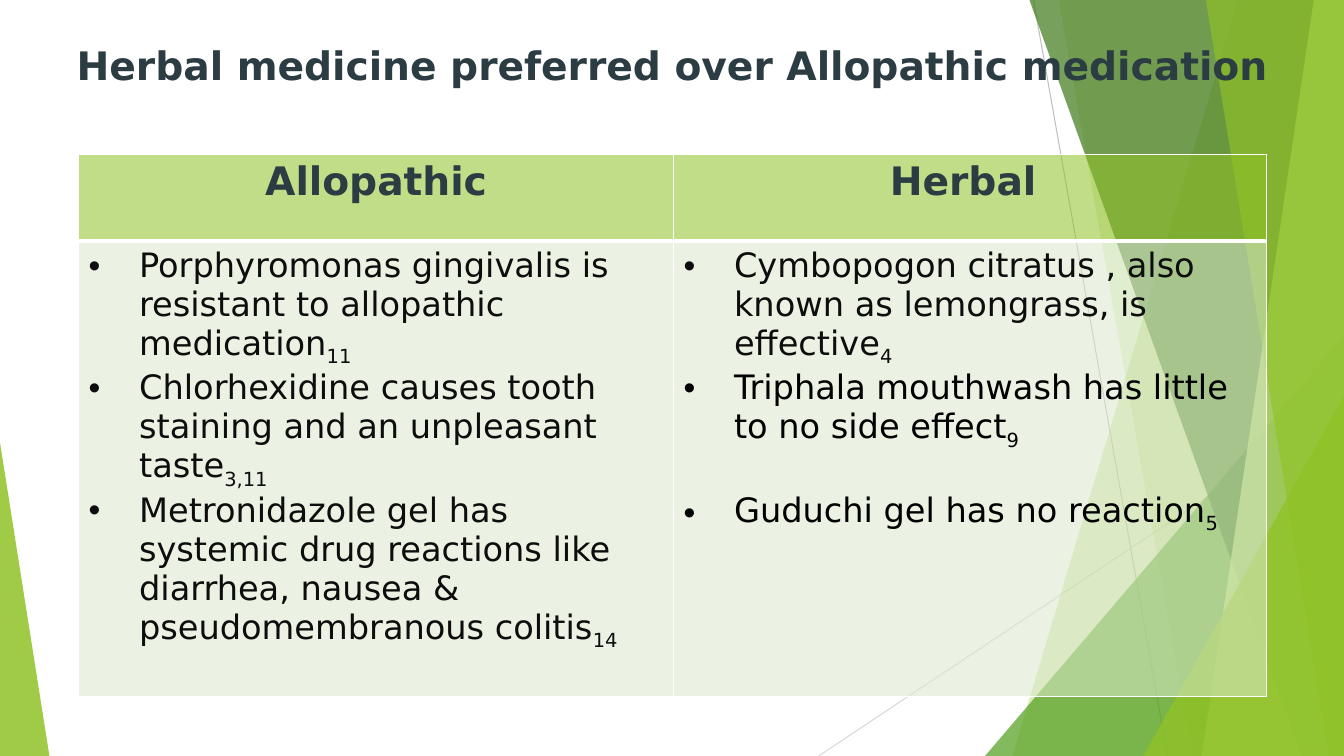
from dataclasses import dataclass

from lxml.etree import Element, SubElement
from pptx import Presentation
from pptx.dml.color import RGBColor
from pptx.enum.shapes import MSO_CONNECTOR, MSO_SHAPE
from pptx.enum.text import MSO_ANCHOR, PP_ALIGN
from pptx.oxml.ns import qn
from pptx.util import Inches, Pt


@dataclass(frozen=True)
class Theme:
    font: str = "DejaVu Sans"
    heading_size: int = 28
    body_size: int = 24
    heading: str = "2C3C43"
    text: str = "0D0D0D"
    black: str = "000000"
    white: str = "FFFFFF"
    lime: str = "90C226"
    leaf: str = "54A021"
    forest: str = "3F7819"
    pale_lime: str = "C0E474"
    cell: str = "DBE9CD"
    gray: str = "BFBFBF"
    light_gray: str = "D9D9D9"


THEME = Theme()
WIDTH, HEIGHT = 13.33, 7.5
HEADERS = ("Allopathic", "Herbal ")
ALLOPATHIC = (
    ("Porphyromonas gingivalis is resistant to allopathic medication", "11", THEME.text, 0),
    ("Chlorhexidine causes tooth staining and an unpleasant taste", "3,11", THEME.text, 0),
    ("Metronidazole gel has systemic drug reactions like diarrhea, nausea & "
     "pseudomembranous colitis", "14", THEME.text, 0),
)
HERBAL = (
    ("Cymbopogon citratus , also known as lemongrass, is effective", "4", THEME.text, 0),
    ("Triphala mouthwash has little to no side effect", "9", THEME.black, 0),
    ("Guduchi gel has no reaction", "5", THEME.black, 28),
)


def apply_format(target, values):
    for name, value in values.items():
        setattr(target, name, value)


def set_fill(fill, element, color, opacity):
    fill.solid()
    fill.fore_color.rgb = RGBColor.from_string(color)
    color_element = element.find(f".//{qn('a:solidFill')}/{qn('a:srgbClr')}")
    SubElement(color_element, qn("a:alpha"), val=str(opacity * 1000))


def style_facet(shape, color, opacity):
    shape.shadow.inherit = False
    set_fill(shape.fill, shape.element, color, opacity)
    shape.line.fill.background()


def add_line(slide, start, end, color):
    connector = slide.shapes.add_connector(
        MSO_CONNECTOR.STRAIGHT, *map(Inches, start + end))
    connector.line.color.rgb = RGBColor.from_string(color)
    connector.line.width = Pt(0.75)
    SubElement(connector.element.spPr, qn("a:effectLst"))


def add_edge_facet(slide, top, bottom, color, opacity):
    builder = slide.shapes.build_freeform(Inches(top), 0, scale=1.0)
    corners = ((WIDTH, 0), (WIDTH, HEIGHT), (bottom, HEIGHT))
    builder.add_line_segments([(Inches(x), Inches(y)) for x, y in corners], close=True)
    style_facet(builder.convert_to_shape(), color, opacity)


def add_triangle(slide, left, top, width, apex, color, opacity):
    shape = slide.shapes.add_shape(
        MSO_SHAPE.ISOSCELES_TRIANGLE,
        *map(Inches, (left, top, width, HEIGHT - top)))
    shape.adjustments[0] = apex
    style_facet(shape, color, opacity)


def add_background(slide):
    add_line(slide, (10.25, 0), (11.58, HEIGHT), THEME.gray)
    add_line(slide, (WIDTH, 4.03), (8.12, HEIGHT), THEME.light_gray)
    add_edge_facet(slide, 12.28, 10.04, THEME.lime, 30)
    add_edge_facet(slide, 10.5, 11.83, THEME.lime, 20)
    add_triangle(slide, 9.77, 3.33, 3.56, 1, THEME.leaf, 72)
    add_edge_facet(slide, 10.21, 12.91, THEME.forest, 70)
    add_edge_facet(slide, 13.03, 11.92, THEME.pale_lime, 70)
    add_edge_facet(slide, 11.96, 13.18, THEME.lime, 65)
    add_triangle(slide, 11.34, 3.93, 1.99, 1, THEME.lime, 80)
    add_triangle(slide, 0, 4.39, 0.49, 0, THEME.lime, 85)


def add_run(paragraph, text, size, color, bold=False):
    run = paragraph.add_run()
    run.text = text
    apply_format(run.font, {"name": THEME.font, "size": Pt(size), "bold": bold})
    run.font.color.rgb = RGBColor.from_string(color)
    return run


def write_heading(paragraph, text):
    paragraph.alignment = PP_ALIGN.CENTER
    add_run(paragraph, text, THEME.heading_size, THEME.heading, True)


def write_bullet(paragraph, text, reference, color, gap):
    paragraph.space_before = Pt(gap)
    properties = paragraph._p.get_or_add_pPr()
    properties.set("marL", str(Inches(0.5)))
    properties.set("indent", str(Inches(-0.5)))
    SubElement(properties, qn("a:buFont"), typeface="Arial")
    SubElement(properties, qn("a:buChar"), char="•")
    add_run(paragraph, text, THEME.body_size, color)
    citation = add_run(paragraph, reference, THEME.body_size, color)
    citation._r.get_or_add_rPr().set("baseline", "-25000")


def style_cell(cell, color, top, bottom):
    properties = cell._tc.get_or_add_tcPr()
    set_fill(cell.fill, properties, color, 55)
    borders = {"a:lnL": 1, "a:lnR": 1, "a:lnT": top, "a:lnB": bottom}
    for position, (tag, width) in enumerate(borders.items()):
        border = Element(qn(tag), w=str(Pt(width)))
        solid = SubElement(border, qn("a:solidFill"))
        SubElement(solid, qn("a:srgbClr"), val=THEME.white)
        properties.insert(position, border)


def add_title(slide, text):
    title = slide.shapes.title
    apply_format(title, {"left": Inches(0.56), "top": Inches(0.36),
                         "width": Inches(12.21), "height": Inches(0.9)})
    apply_format(title.text_frame, {"word_wrap": True, "vertical_anchor": MSO_ANCHOR.TOP})
    write_heading(title.text_frame.paragraphs[0], text)
    title.element.getparent().append(title.element)


def add_comparison(slide):
    table = slide.shapes.add_table(
        2, 2, *map(Inches, (0.78, 1.53, 11.78, 5.38))).table
    table.horz_banding = False
    for column, width in zip(table.columns, (5.9, 5.88)):
        column.width = Inches(width)
    for row, height in zip(table.rows, (0.86, 4.52)):
        row.height = Inches(height)
    for index, (header, points) in enumerate(zip(HEADERS, (ALLOPATHIC, HERBAL))):
        heading_cell, body_cell = table.cell(0, index), table.cell(1, index)
        style_cell(heading_cell, THEME.lime, 1, 3)
        style_cell(body_cell, THEME.cell, 3, 1)
        write_heading(heading_cell.text_frame.paragraphs[0], header)
        frame = body_cell.text_frame
        for number, point in enumerate(points):
            paragraph = frame.add_paragraph() if number else frame.paragraphs[0]
            write_bullet(paragraph, *point)


def main():
    presentation = Presentation()
    apply_format(presentation, {"slide_width": Inches(WIDTH), "slide_height": Inches(HEIGHT)})
    slide = presentation.slides.add_slide(presentation.slide_layouts[5])
    add_background(slide)
    add_title(slide, "Herbal medicine preferred over Allopathic medication")
    add_comparison(slide)
    presentation.save("out.pptx")


if __name__ == "__main__":
    main()
